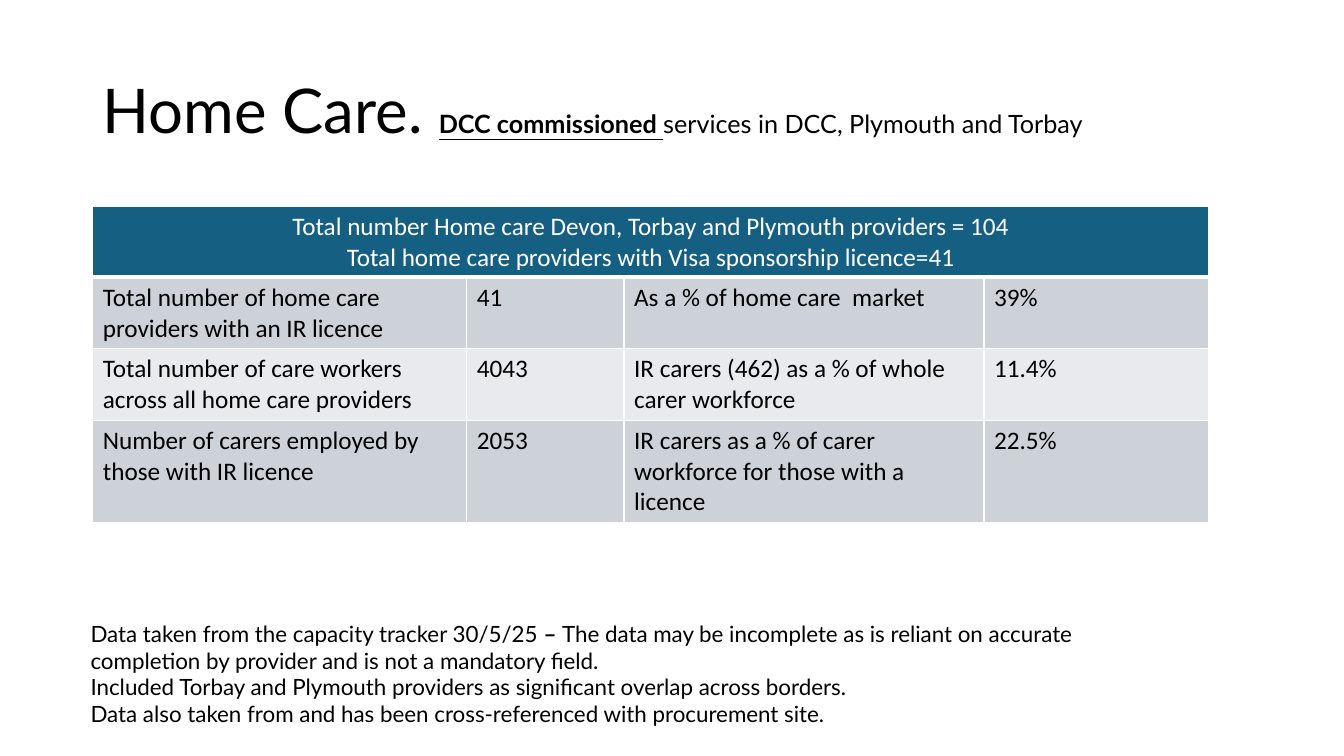
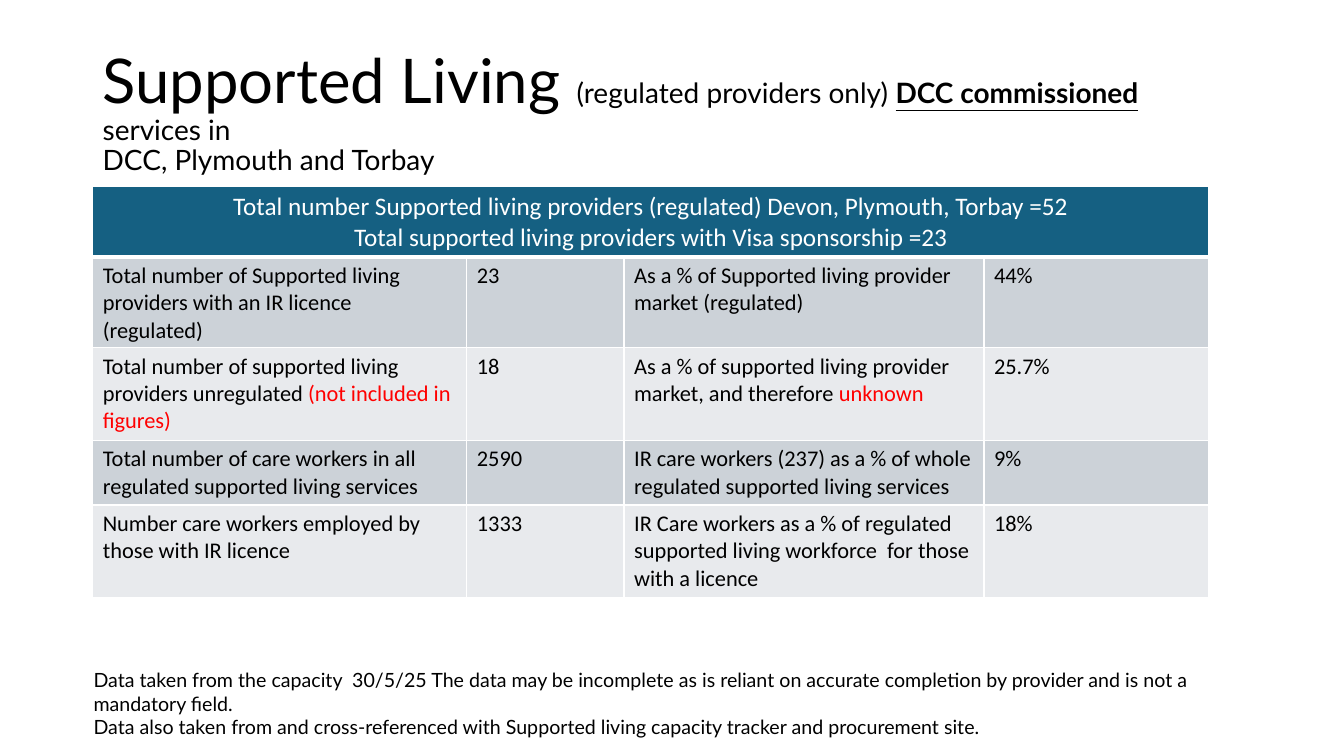
from dataclasses import dataclass

from lxml.etree import SubElement
from pptx import Presentation
from pptx.dml.color import RGBColor
from pptx.enum.text import MSO_ANCHOR, PP_ALIGN
from pptx.oxml.ns import qn
from pptx.util import Inches, Pt


@dataclass(frozen=True)
class Theme:
    """Colours, fonts and type sizes shared by the slides."""

    black: str = "000000"
    white: str = "FFFFFF"
    red: str = "FF0000"
    header: str = "156082"
    bands: tuple = ("CCD2D8", "E8EAED")
    text_font: str = "Lato"
    table_font: str = "Calibri"
    title_size: int = 44
    header_size: int = 18
    rule: int = 1
    header_rule: int = 3


THEME = Theme()
COLUMNS = (3.71, 1.56, 3.57, 2.23)
HEADER_HEIGHT = 0.7
TABLE_LEFT = 0.92
TITLE_FRAME = (0.92, 0.4, 11.5, 1.45)
STRONG = {"bold": True, "underline": True}
ALERT = {"color": THEME.red}

HOME_CARE = {
    "title": [
        ("Home Care. ", {"size": THEME.title_size}),
        ("DCC commissioned ", STRONG),
        "services in DCC, Plymouth and Torbay",
    ],
    "subtitle_size": 18,
    "table_top": 2.05,
    "cell_size": 18,
    "header": [
        "Total number Home care Devon, Torbay and Plymouth providers = 104",
        "Total home care providers with Visa sponsorship licence=41",
    ],
    "row_heights": (0.71, 0.71, 1.01),
    "rows": [
        ("Total number of home care providers with an IR licence", "41",
         "As a % of home care  market", "39%"),
        ("Total number of care workers across all home care providers", "4043",
         "IR carers (462) as a % of whole carer workforce", "11.4%"),
        ("Number of carers employed by those with IR licence", "2053",
         "IR carers as a % of carer workforce for those with a licence", "22.5%"),
    ],
    "note_frame": (0.8, 6.1, 10.97, 1.17),
    "note_size": 16,
    "note": [
        [
            "Data taken from the capacity tracker 30/5/25 ",
            ("– ", {"bold": True}),
            "The data may be incomplete as is reliant on accurate completion "
            "by provider and is not a mandatory field.",
        ],
        "Included Torbay and Plymouth providers as significant overlap across borders.",
        "Data also taken from and has been cross-referenced with procurement site.",
    ],
}

SUPPORTED_LIVING = {
    "title": [
        ("Supported Living ", {"size": THEME.title_size}),
        "(regulated providers only) ",
        ("DCC commissioned ", STRONG),
        "services in \nDCC, Plymouth and Torbay",
    ],
    "subtitle_size": 20,
    "table_top": 1.85,
    "cell_size": 16,
    "header": [
        "Total number Supported living providers (regulated) Devon, Plymouth, Torbay =52",
        "Total supported living providers with Visa sponsorship =23",
    ],
    "row_heights": (0.64, 0.92, 0.64, 0.92),
    "rows": [
        ("Total number of Supported living providers with an IR licence (regulated)", "23",
         "As a % of Supported living provider market (regulated)", "44%"),
        (["Total number of supported living providers unregulated ",
          ("(not included in figures)", ALERT)], "18",
         ["As a % of supported living provider market, and therefore ",
          ("unknown", ALERT)], "25.7%"),
        ("Total number of care workers in all regulated supported living services", "2590",
         "IR care workers (237) as a % of whole regulated supported living services", "9%"),
        ("Number care workers employed by those with IR licence", "1333",
         "IR Care workers as a % of regulated supported living workforce  "
         "for those with a licence", "18%"),
    ],
    "note_frame": (0.83, 6.58, 11.26, 0.81),
    "note_size": 14,
    "note": [
        "Data taken from the capacity  30/5/25 The data may be incomplete as is reliant "
        "on accurate completion by provider and is not a mandatory field.",
        "Data also taken from and cross-referenced with Supported living capacity tracker "
        "and procurement site.",
    ],
}


def set_attributes(target, values):
    """Set each named attribute of the target."""
    for name, value in values.items():
        setattr(target, name, value)


def add_span(para, text, style):
    """Add formatted text, turning each newline into a line break."""
    for index, line in enumerate(text.split("\n")):
        if index:
            para.add_line_break()
        span = para.add_run()
        span.text = line
        values = {"bold": False, "underline": False, **style}
        color = values.pop("color")
        values["size"] = Pt(values["size"])
        set_attributes(span.font, values)
        span.font.color.rgb = RGBColor.from_string(color)


def write_paragraphs(frame, paragraphs, style, **layout):
    """Fill a text frame with paragraphs of plain or styled spans."""
    for index, content in enumerate(paragraphs):
        para = frame.add_paragraph() if index else frame.paragraphs[0]
        set_attributes(para, layout)
        for part in [content] if isinstance(content, str) else content:
            text, changes = (part, {}) if isinstance(part, str) else part
            add_span(para, text, {**style, **changes})


def add_text(page, frame, paragraphs, size, anchor=MSO_ANCHOR.TOP, **layout):
    """Add a wrapping text box in the text font."""
    box = page.shapes.add_textbox(*map(Inches, frame))
    set_attributes(box.text_frame, {"word_wrap": True, "vertical_anchor": anchor})
    style = {"name": THEME.text_font, "size": size, "color": THEME.black}
    write_paragraphs(box.text_frame, paragraphs, style, **layout)


def paint_cell(cell, fill, bottom=THEME.rule):
    """Give a cell white borders and a solid fill."""
    properties = cell._tc.get_or_add_tcPr()
    widths = {"a:lnL": THEME.rule, "a:lnR": THEME.rule,
              "a:lnT": THEME.rule, "a:lnB": bottom}
    for tag, width in widths.items():
        line = SubElement(properties, qn(tag), w=str(Pt(width)))
        solid = SubElement(line, qn("a:solidFill"))
        SubElement(solid, qn("a:srgbClr"), val=THEME.white)
    cell.fill.solid()
    cell.fill.fore_color.rgb = RGBColor.from_string(fill)


def add_data_table(page, content):
    """Add the table with a merged header and banded rows."""
    heights = (HEADER_HEIGHT, *content["row_heights"])
    frame = (TABLE_LEFT, content["table_top"], sum(COLUMNS), sum(heights))
    table = page.shapes.add_table(
        len(heights), len(COLUMNS), *map(Inches, frame)).table
    set_attributes(table, {"first_row": False, "horz_banding": False})
    for column, width in zip(table.columns, COLUMNS):
        column.width = Inches(width)
    for row, height in zip(table.rows, heights):
        row.height = Inches(height)

    style = {"name": THEME.table_font, "size": THEME.header_size, "color": THEME.white}
    header = table.cell(0, 0)
    header.merge(table.cell(0, len(COLUMNS) - 1))
    for cell in table.rows[0].cells:
        paint_cell(cell, THEME.header, THEME.header_rule)
    write_paragraphs(header.text_frame, content["header"], style,
                     alignment=PP_ALIGN.CENTER)

    style.update(size=content["cell_size"], color=THEME.black)
    for index, values in enumerate(content["rows"]):
        for cell, value in zip(table.rows[index + 1].cells, values):
            paint_cell(cell, THEME.bands[index % len(THEME.bands)])
            write_paragraphs(cell.text_frame, [value], style)


def add_page(deck, content):
    """Add one slide with its title, table and source note."""
    page = deck.slides.add_slide(deck.slide_layouts[6])
    add_text(page, TITLE_FRAME, [content["title"]], content["subtitle_size"],
             MSO_ANCHOR.MIDDLE, line_spacing=0.9)
    add_data_table(page, content)
    add_text(page, content["note_frame"], content["note"], content["note_size"])


def main():
    """Build and save the deck."""
    deck = Presentation()
    set_attributes(deck, {"slide_width": Inches(13.33), "slide_height": Inches(7.5)})
    for content in (HOME_CARE, SUPPORTED_LIVING):
        add_page(deck, content)
    deck.save("out.pptx")


if __name__ == "__main__":
    main()
